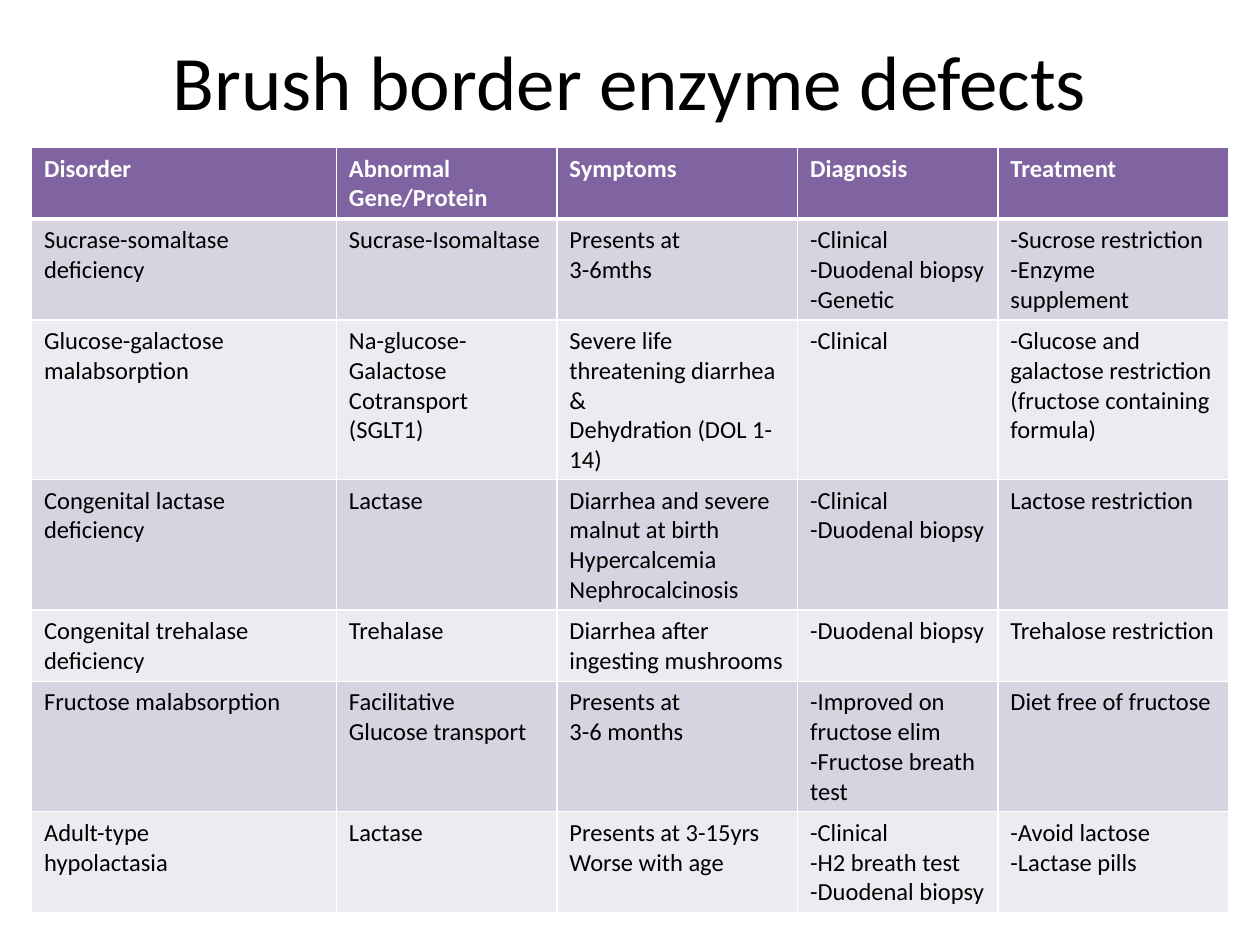
from lxml import etree
from pptx import Presentation
from pptx.dml.color import RGBColor
from pptx.enum.text import MSO_ANCHOR, PP_ALIGN
from pptx.oxml.ns import qn
from pptx.util import Inches, Pt

COLORS = {
    "text": "000000",
    "header_text": "FFFFFF",
    "header": "8064A2",
    "band_dark": "D8D3E0",
    "band_light": "EDEAF0",
    "border": "FFFFFF",
}
FONT = "Calibri"
COLUMN_WIDTHS = [2.42, 1.75, 1.91, 1.59, 1.83]
ROW_HEIGHT = 0.41
DEFECTS = [
    ["Disorder", "Abnormal Gene/Protein", "Symptoms", "Diagnosis", "Treatment"],
    ["Sucrase-somaltase deficiency", "Sucrase-Isomaltase", "Presents at\n3-6mths",
     "-Clinical\n-Duodenal biopsy\n-Genetic",
     "-Sucrose restriction\n-Enzyme supplement"],
    ["Glucose-galactose\nmalabsorption",
     "Na-glucose-\nGalactose\nCotransport\n(SGLT1)",
     "Severe life threatening diarrhea &\nDehydration (DOL 1-14)",
     "-Clinical",
     "-Glucose and galactose restriction (fructose containing formula)"],
    ["Congenital lactase\ndeficiency", "Lactase",
     "Diarrhea and severe malnut at birth\nHypercalcemia\nNephrocalcinosis",
     "-Clinical\n-Duodenal biopsy", "Lactose restriction"],
    ["Congenital trehalase deficiency", "Trehalase",
     "Diarrhea after ingesting mushrooms", "-Duodenal biopsy",
     "Trehalose restriction"],
    ["Fructose malabsorption", "Facilitative\nGlucose transport",
     "Presents at\n3-6 months",
     "-Improved on fructose elim\n-Fructose breath test",
     "Diet free of fructose"],
    ["Adult-type\nhypolactasia", "Lactase", "Presents at 3-15yrs\nWorse with age",
     "-Clinical\n-H2 breath test\n-Duodenal biopsy",
     "-Avoid lactose\n-Lactase pills"],
]


def write_text(tf, text, color, **font_values):
    """Fill a text frame, one paragraph for each line of text."""
    tf.text = text
    for p in tf.paragraphs:
        for r in p.runs:
            for name, value in {"name": FONT, **font_values}.items():
                setattr(r.font, name, value)
            r.font.color.rgb = RGBColor.from_string(COLORS[color])


def set_borders(cell, widths):
    """Draw the cell's edges, with widths in points keyed by L, R, T and B."""
    tc_pr = cell._tc.get_or_add_tcPr()
    for i, (side, width) in enumerate(widths.items()):
        ln = etree.Element(qn(f"a:ln{side}"), w=str(Pt(width)))
        fill = etree.SubElement(ln, qn("a:solidFill"))
        etree.SubElement(fill, qn("a:srgbClr"), val=COLORS["border"])
        tc_pr.insert(i, ln)


def add_title(slide, text, left, top, width, height):
    box = slide.shapes.add_textbox(
        Inches(left), Inches(top), Inches(width), Inches(height))
    tf = box.text_frame
    tf.word_wrap = True
    tf.vertical_anchor = MSO_ANCHOR.MIDDLE
    write_text(tf, text, "text", size=Pt(44))
    tf.paragraphs[0].alignment = PP_ALIGN.CENTER


def add_defects_table(slide, rows, left, top):
    table = slide.shapes.add_table(
        len(rows), len(COLUMN_WIDTHS), Inches(left), Inches(top),
        Inches(sum(COLUMN_WIDTHS)), Inches(ROW_HEIGHT * len(rows))).table
    for column, width in zip(table.columns, COLUMN_WIDTHS):
        column.width = Inches(width)
    for i, values in enumerate(rows):
        table.rows[i].height = Inches(ROW_HEIGHT)
        is_header = i == 0
        band = "header" if is_header else ("band_light", "band_dark")[i % 2]
        borders = {"L": 1, "R": 1, "T": 3 if i == 1 else 1, "B": 3 if is_header else 1}
        for j, value in enumerate(values):
            cell = table.cell(i, j)
            cell.fill.solid()
            cell.fill.fore_color.rgb = RGBColor.from_string(COLORS[band])
            set_borders(cell, borders)
            write_text(cell.text_frame, value, "header_text" if is_header else "text",
                       size=Pt(14), bold=is_header)


def main():
    prs = Presentation()
    prs.slide_width, prs.slide_height = Inches(10), Inches(7.5)
    slide = prs.slides.add_slide(prs.slide_layouts[6])
    add_title(slide, "Brush border enzyme defects", 0.5, 0.01, 9, 1.25)
    add_defects_table(slide, DEFECTS, 0.25, 1.17)
    prs.save("out.pptx")


if __name__ == "__main__":
    main()
